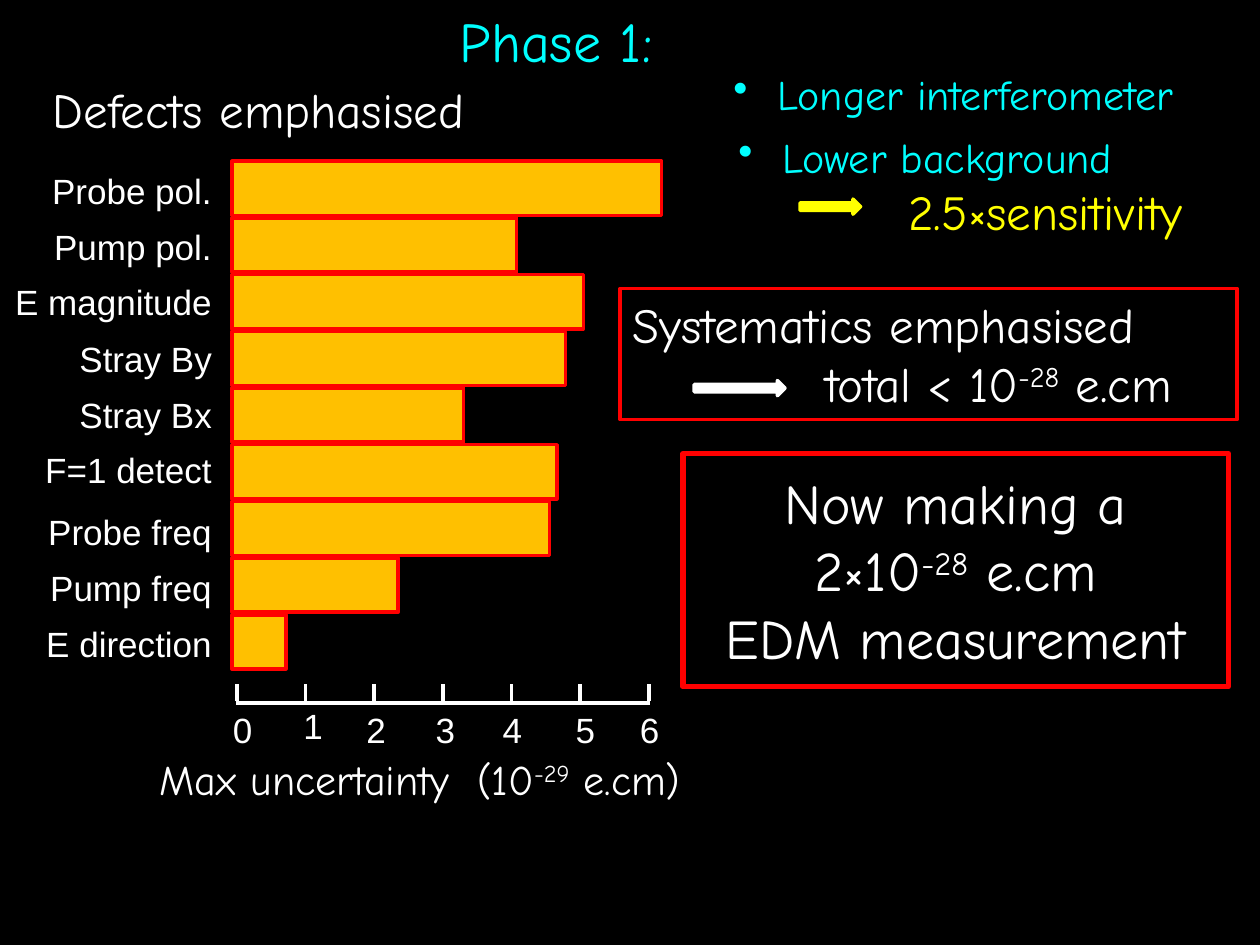
from lxml import etree
from pptx import Presentation
from pptx.dml.color import RGBColor
from pptx.enum.shapes import MSO_CONNECTOR, MSO_SHAPE
from pptx.enum.text import MSO_ANCHOR, PP_ALIGN
from pptx.oxml.ns import qn
from pptx.util import Inches, Pt

BLACK = RGBColor(0, 0, 0)
WHITE = RGBColor(255, 255, 255)
CYAN = RGBColor(0, 255, 255)
YELLOW = RGBColor(255, 255, 0)
RED = RGBColor(255, 0, 0)
AMBER = RGBColor(255, 192, 0)
LEFT, CENTER, RIGHT = PP_ALIGN.LEFT, PP_ALIGN.CENTER, PP_ALIGN.RIGHT
RECTANGLE, ARROW = MSO_SHAPE.RECTANGLE, MSO_SHAPE.RIGHT_ARROW
HAND, SANS = "Comic Neue", "Arial"

prs = Presentation()
prs.slide_width, prs.slide_height = Inches(10), Inches(7.5)
slide = prs.slides.add_slide(prs.slide_layouts[6])
slide.background.fill.solid()
slide.background.fill.fore_color.rgb = BLACK


def add_block(box, line, paragraphs, wrap=True, inset=0.1):
    """Put text in a new text box, or in a red frame if line has a width.

    Each paragraph is (text, size, font, colour, alignment, indent, bullet);
    a part of the text between ^ marks is raised.
    """
    place = [Inches(v) for v in box]
    if line:
        block = slide.shapes.add_shape(RECTANGLE, *place)
        block.shadow.inherit = False
        block.fill.background()
        block.line.color.rgb = RED
        block.line.width = Pt(line)
    else:
        block = slide.shapes.add_textbox(*place)
    frame = block.text_frame
    frame.word_wrap = wrap
    frame.vertical_anchor = MSO_ANCHOR.TOP
    frame.margin_left = frame.margin_right = Inches(inset)
    frame.margin_top = frame.margin_bottom = Inches(inset if inset > 0.1 else 0.05)
    for i, (text, size, font, color, align, indent, bullet) in enumerate(paragraphs):
        paragraph = frame.add_paragraph() if i else frame.paragraphs[0]
        paragraph.alignment = align
        paragraph.font.size = Pt(size)
        paragraph.font.name = font
        paragraph.font.color.rgb = color
        for part, piece in enumerate(text.split("^")):
            run = paragraph.add_run()
            run.text = piece
            if part % 2:
                run.font._element.set("baseline", "30000")
        properties = paragraph._p.get_or_add_pPr()
        properties.set("marL", str(Inches(indent)))
        properties.set("indent", str(-Inches(indent) if bullet else 0))
        if bullet:
            mark = etree.Element(qn("a:buChar"), char="•")
            properties.insert_element_before(mark, "a:tabLst", "a:defRPr", "a:extLst")


def add_solid(kind, box, fill, line):
    solid = slide.shapes.add_shape(kind, *[Inches(v) for v in box])
    solid.shadow.inherit = False
    solid.fill.solid()
    solid.fill.fore_color.rgb = fill
    solid.line.color.rgb = line
    solid.line.width = Pt(2)


# Headings
add_block((3.55, 0, 1.86, 0.64), 0,
          [("Phase 1:", 32, HAND, CYAN, LEFT, 0, False)], wrap=False)
add_block((0.32, 0.58, 3.91, 0.57), 0,
          [("Defects emphasised", 28, HAND, WHITE, LEFT, 0, False)], wrap=False)

# Improvements and their gain
add_block((5.7, 0.42, 4.07, 0.64), 0,
          [("Longer interferometer", 24, HAND, CYAN, LEFT, 0.35, True)], inset=0.12)
add_block((5.74, 0.92, 4.26, 1.11), 0,
          [("Lower background", 24, HAND, CYAN, LEFT, 0.35, True),
           ("2.5×sensitivity", 28, HAND, YELLOW, LEFT, 1.35, False)], inset=0.12)
add_solid(ARROW, (6.35, 1.58, 0.48, 0.12), YELLOW, YELLOW)

# Framed results
add_block((4.92, 2.29, 4.9, 1.04), 2,
          [("Systematics emphasised", 28, HAND, WHITE, LEFT, 0, False),
           ("total < 10^-28^ e.cm", 28, HAND, WHITE, LEFT, 1.53, False)])
add_solid(ARROW, (5.51, 3.02, 0.72, 0.12), WHITE, WHITE)
add_block((5.42, 3.6, 4.33, 1.85), 3,
          [(text, 32, HAND, WHITE, CENTER, 0, False)
           for text in ("Now making a", "2×10^-28^ e.cm", "EDM measurement")],
          inset=0.12)

# Bars: label, label top, bar length
DEFECTS = [
    ("Probe pol.", 1.3, 3.41),
    ("Pump pol.", 1.74, 2.26),
    ("E magnitude", 2.18, 2.79),
    ("Stray By", 2.63, 2.65),
    ("Stray Bx", 3.07, 1.84),
    ("F=1 detect", 3.51, 2.58),
    ("Probe freq", 4, 2.52),
    ("Pump freq", 4.45, 1.32),
    ("E direction", 4.89, 0.43),
]
BAR_LEFT, BAR_TOP, BAR_PITCH, BAR_HEIGHT = 1.84, 1.28, 0.45, 0.43
for row, (label, label_top, length) in enumerate(DEFECTS):
    add_solid(RECTANGLE, (BAR_LEFT, BAR_TOP + row * BAR_PITCH, length, BAR_HEIGHT),
              AMBER, RED)
    add_block((0, label_top, 1.78, 0.44), 0,
              [(label, 20, SANS, WHITE, RIGHT, 0, False)])

# Axis with a tick for each unit
TICK_LEFT, TICK_STEP = 1.88, 0.545
axis_lines = [(1.87, 5.58, 5.16, 5.58)]
for unit in range(7):
    x = TICK_LEFT + unit * TICK_STEP
    axis_lines.append((x, 5.43, x, 5.56))
for ends in axis_lines:
    axis_line = slide.shapes.add_connector(MSO_CONNECTOR.STRAIGHT,
                                           *[Inches(v) for v in ends])
    axis_line.line.color.rgb = WHITE
    axis_line.line.width = Pt(2)
    etree.SubElement(axis_line._element.spPr, qn("a:effectLst"))

UNIT_LEFTS = [1.75, 2.31, 2.81, 3.36, 3.89, 4.47, 4.98]
for unit, left in enumerate(UNIT_LEFTS):
    top = 5.54 if unit == 1 else 5.57
    add_block((left, top, 0.27, 0.44), 0,
              [(str(unit), 20, SANS, WHITE, LEFT, 0, False)], wrap=False)
add_block((1.17, 5.93, 4.75, 0.5), 0,
          [("Max uncertainty  (10^-29^ e.cm)", 24, HAND, WHITE, LEFT, 0, False)],
          wrap=False)

prs.save("out.pptx")
